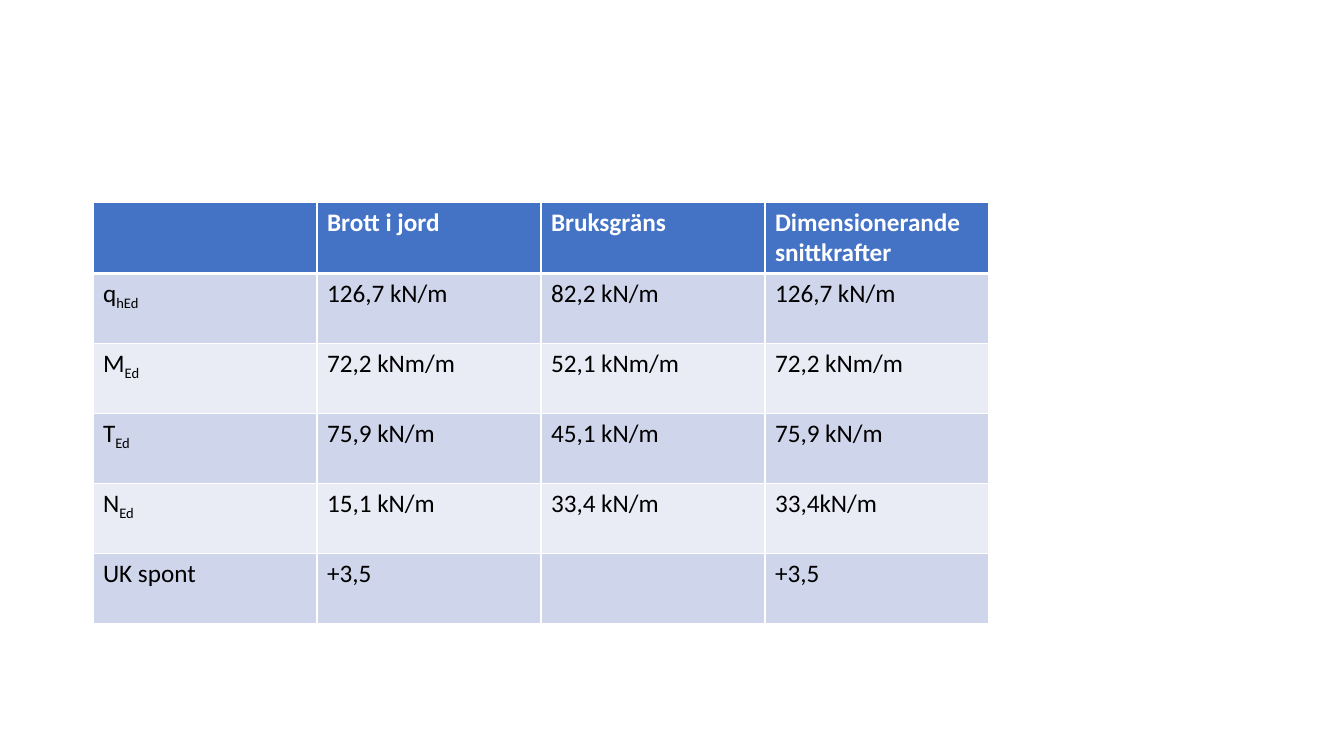
"""Builds a slide with a table of design forces for a sheet pile wall."""
from dataclasses import dataclass

from lxml.etree import SubElement
from pptx import Presentation
from pptx.dml.color import RGBColor
from pptx.oxml.ns import qn
from pptx.util import Emu, Pt

ROWS = [
    ["", "Brott i jord", "Bruksgräns", "Dimensionerande snittkrafter"],
    ["q_hEd", "126,7 kN/m", "82,2 kN/m", "126,7 kN/m"],
    ["M_Ed", "72,2 kNm/m", "52,1 kNm/m", "72,2 kNm/m"],
    ["T_Ed", "75,9 kN/m", "45,1 kN/m", "75,9 kN/m"],
    ["N_Ed", "15,1 kN/m", "33,4 kN/m", "33,4kN/m"],
    ["UK spont", "+3,5", "", "+3,5"],
]


@dataclass(frozen=True)
class Theme:
    """Colours and type of the slide."""

    font: str = "Calibri"
    size: int = 18
    header: str = "4472C4"
    bands: tuple = ("E9EBF5", "CFD5EA")
    header_text: str = "FFFFFF"
    body_text: str = "000000"
    border: str = "FFFFFF"
    thin: int = 1
    thick: int = 3


class SlideBuilder:
    """Draws elements on the current slide, measured in px."""

    def __init__(self, deck, theme):
        """Add a blank page to the deck."""
        self.theme = theme
        self.page = deck.slides.add_slide(deck.slide_layouts[6])

    @staticmethod
    def px(length):
        """Turn px into EMU."""
        return Emu(round(length * 914400 / 100.8))

    def table(self, left, top, column_width, row_height, rows):
        """Add a table with a header row and banded body rows."""
        box = [left, top, column_width * len(rows[0]), row_height * len(rows)]
        table = self.page.shapes.add_table(
            len(rows), len(rows[0]), *map(self.px, box)
        ).table
        for column in table.columns:
            column.width = self.px(column_width)
        for row_number, texts in enumerate(rows):
            table.rows[row_number].height = self.px(row_height)
            for column_number, text in enumerate(texts):
                self.cell(table.cell(row_number, column_number), row_number, text)

    def cell(self, cell, row_number, text):
        """Style and fill one table cell."""
        theme = self.theme
        is_header = row_number == 0
        top = theme.thick if row_number == 1 else theme.thin
        bottom = theme.thick if is_header else theme.thin
        self.borders(cell, L=theme.thin, R=theme.thin, T=top, B=bottom)
        fill = theme.header if is_header else theme.bands[row_number % 2]
        cell.fill.solid()
        cell.fill.fore_color.rgb = RGBColor.from_string(fill)
        color = theme.header_text if is_header else theme.body_text
        self.text(cell.text_frame.paragraphs[0], text, color, is_header)

    def borders(self, cell, **widths):
        """Draw the cell's borders, given in points by side."""
        properties = cell._tc.get_or_add_tcPr()
        for side, width in widths.items():
            line = SubElement(properties, qn(f"a:ln{side}"), w=str(Pt(width)))
            fill = SubElement(line, qn("a:solidFill"))
            SubElement(fill, qn("a:srgbClr"), val=self.theme.border)

    def text(self, para, text, color, bold):
        """Write text, with the part after an underscore as a subscript."""
        para.font.name = self.theme.font
        para.font.size = Pt(self.theme.size)
        para.font.bold = bold
        para.font.color.rgb = RGBColor.from_string(color)
        base, _, subscript = text.partition("_")
        if base:
            para.add_run().text = base
        if subscript:
            span = para.add_run()
            span.text = subscript
            span._r.get_or_add_rPr().set("baseline", "-25000")


def main():
    """Build and save the deck."""
    deck = Presentation()
    deck.slide_width = SlideBuilder.px(1344)
    deck.slide_height = SlideBuilder.px(756)
    builder = SlideBuilder(deck, Theme())
    builder.table(93, 202, 224, 70, ROWS)
    deck.save("out.pptx")


if __name__ == "__main__":
    main()
